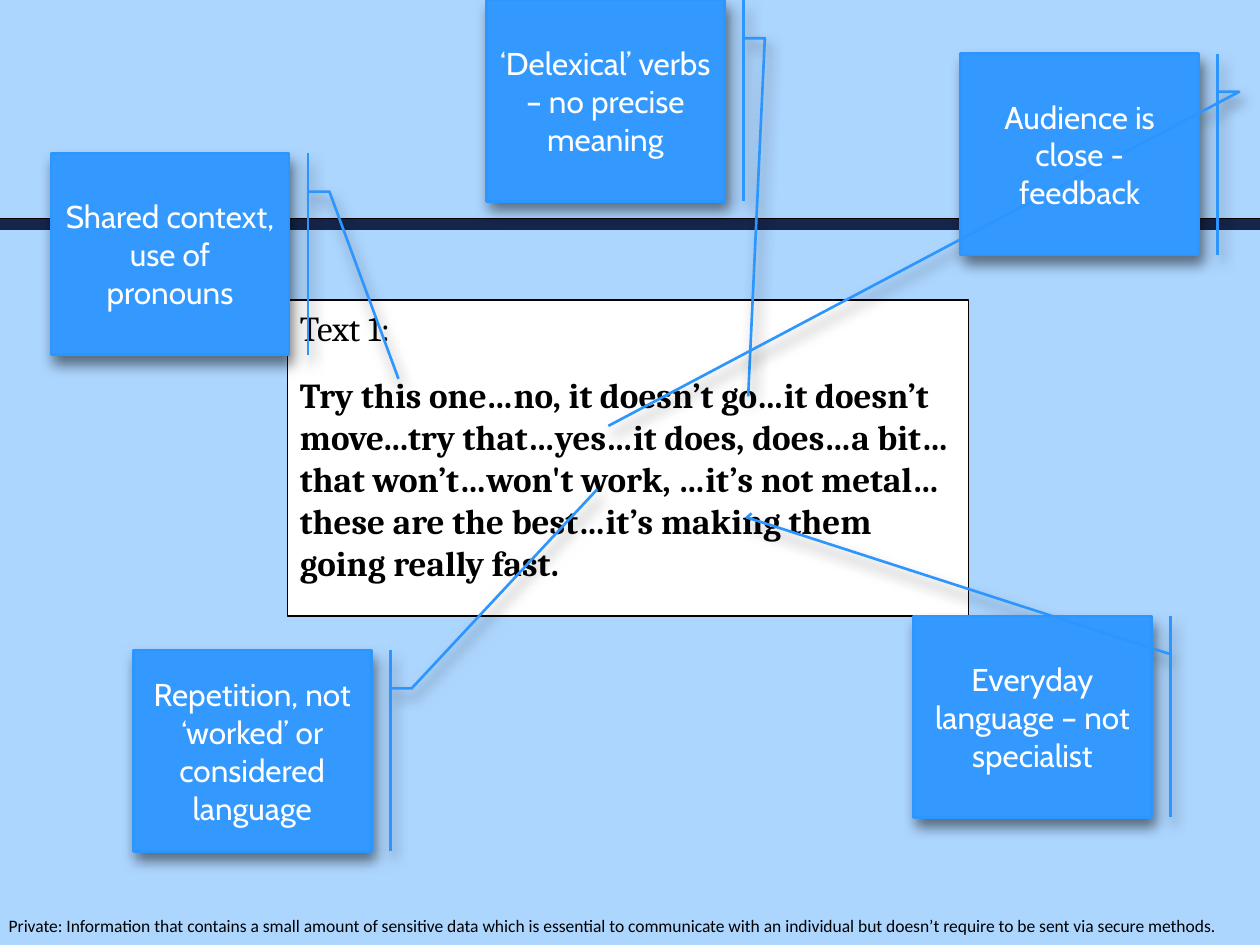
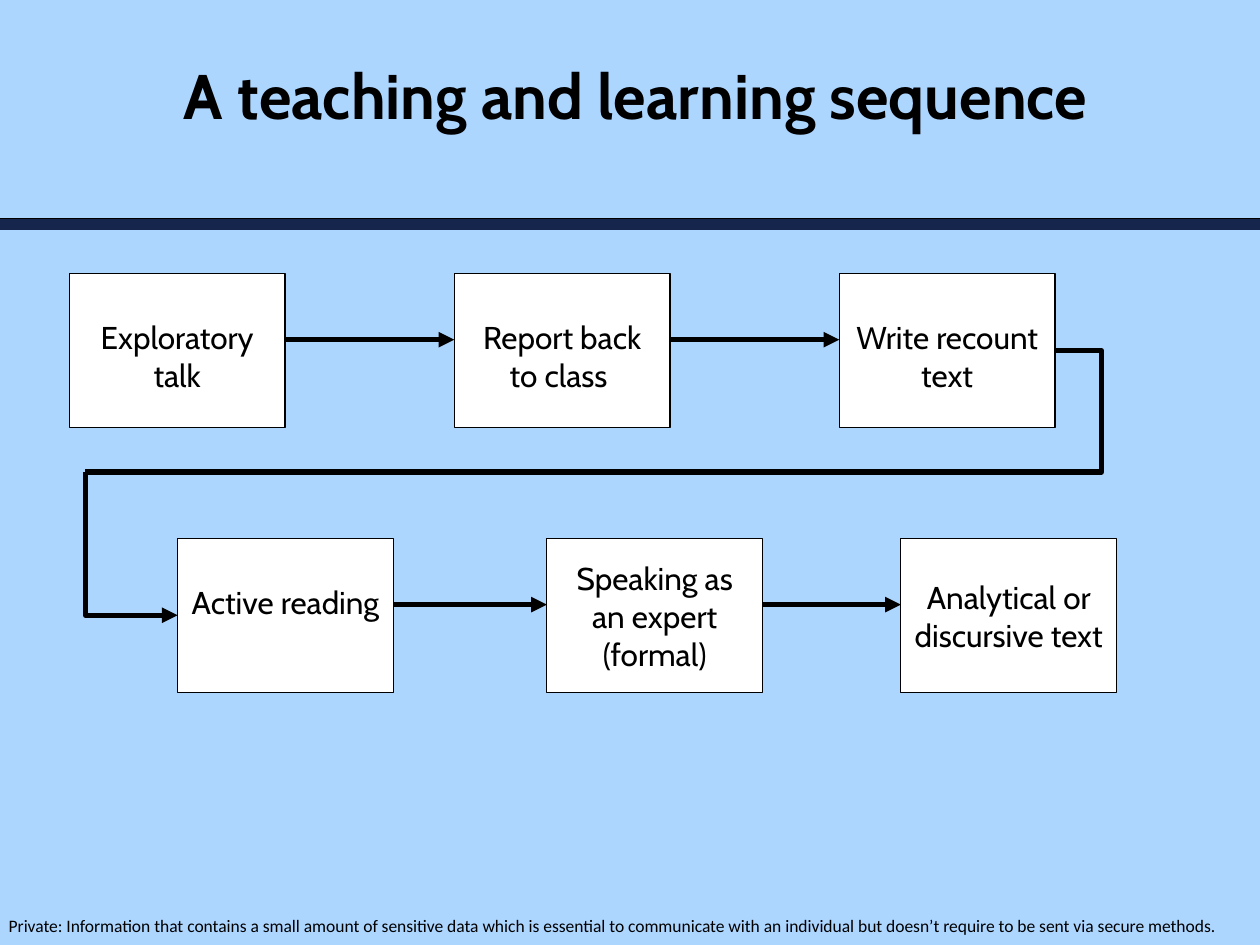
"""Build two slides on exploratory talk: an annotated transcript and a teaching sequence."""
import lxml.etree
import pptx
import pptx.dml.color
import pptx.enum.shapes
import pptx.enum.text
import pptx.oxml
import pptx.oxml.ns
import pptx.util

Pt = pptx.util.Pt
RGBColor = pptx.dml.color.RGBColor
SHAPE = pptx.enum.shapes.MSO_SHAPE
CONNECTOR = pptx.enum.shapes.MSO_CONNECTOR
ANCHOR = pptx.enum.text.MSO_ANCHOR
ALIGN = pptx.enum.text.PP_ALIGN
qn = pptx.oxml.ns.qn

SKY = RGBColor(0xAD, 0xD6, 0xFF)
NAVY = RGBColor(0x15, 0x25, 0x4B)
CALLOUT_FILL = RGBColor(0x33, 0x99, 0xFF)
CALLOUT_LINE = RGBColor(0x2D, 0x96, 0xFE)
BLACK = RGBColor(0, 0, 0)
WHITE = RGBColor(255, 255, 255)

WIDTH, HEIGHT = 720, 540
PRIVACY_NOTE = (
    "Private: Information that contains a small amount of sensitive data which is essential "
    "to communicate with an individual but doesn’t require to be sent via secure methods."
)
CALLOUT_SHADOW = (
    '<a:outerShdw xmlns:a="http://schemas.openxmlformats.org/drawingml/2006/main" '
    'blurRad="101600" dist="63500" dir="4200000" rotWithShape="0">'
    '<a:srgbClr val="000000"><a:alpha val="50000"/></a:srgbClr></a:outerShdw>'
)


def format_text(para, font, size, color, bold=False, align=ALIGN.LEFT):
    para.alignment = align
    for span in para.runs:
        span.font.name = font
        span.font.size = Pt(size)
        span.font.bold = bold
        span.font.color.rgb = color


def add_line(page, kind, start, end, color, weight, arrow=False):
    line = page.shapes.add_connector(kind, *(Pt(value) for value in start + end))
    line.line.color.rgb = color
    line.line.width = Pt(weight)
    if arrow:
        lxml.etree.SubElement(line.line._get_or_add_ln(), qn("a:tailEnd"), type="triangle")
    lxml.etree.SubElement(line._element.spPr, qn("a:effectLst"))
    return line


deck = pptx.Presentation()
deck.slide_width, deck.slide_height = Pt(WIDTH), Pt(HEIGHT)
background = deck.slide_master.background.fill
background.solid()
background.fore_color.rgb = SKY

talk_page = deck.slides.add_slide(deck.slide_layouts[6])
sequence_page = deck.slides.add_slide(deck.slide_layouts[5])

for page in (talk_page, sequence_page):
    note = page.shapes.add_textbox(Pt(5), Pt(522.7), Pt(695.5), Pt(12.2))
    frame = note.text_frame
    frame.word_wrap = True
    frame.margin_left = frame.margin_right = frame.margin_top = frame.margin_bottom = 0
    frame.text = PRIVACY_NOTE
    format_text(frame.paragraphs[0], "Calibri", 10, BLACK)
    for height, color, weight in ((128.2, NAVY, 7), (124.6, BLACK, 0.5)):
        add_line(page, CONNECTOR.STRAIGHT, (0, height), (WIDTH, height), color, weight)

transcript = talk_page.shapes.add_shape(SHAPE.RECTANGLE, Pt(164.3), Pt(171.4), Pt(389), Pt(180.6))
transcript.shadow.inherit = False
transcript.fill.solid()
transcript.fill.fore_color.rgb = WHITE
transcript.line.color.rgb = BLACK
transcript.line.width = Pt(0.75)
frame = transcript.text_frame
frame.word_wrap = True
frame.vertical_anchor = ANCHOR.TOP
frame.text = (
    "Text 1:\nTry this one…no, it doesn’t go…it doesn’t move...try that…yes…it does, does…a bit…"
    "that won’t…won't work, …it’s not metal…these are the best…it’s making them going really fast."
)
heading, speech = frame.paragraphs
format_text(heading, "Cambria", 20, BLACK)
format_text(speech, "Cambria", 20, BLACK, bold=True)
speech.space_before = Pt(14.5)

CALLOUTS = (
    ("Shared context, use of pronouns", 29.2, 87.7, (0.19, -0.08, 0.19, -0.17, 1.12, -0.46)),
    ("‘Delexical’ verbs – no precise meaning", 278, 0, (0.19, -0.08, 0.19, -0.17, 1.97, -0.1)),
    ("Audience is close - feedback", 549, 30.6, (0.19, -0.08, 0.19, -0.17, 1.85, 2.48)),
    ("Everyday language – not specialist", 522, 352, (0.19, -0.08, -0.49, 1.7, -0.51, 1.68)),
    ("Repetition, not ‘worked’ or considered language", 76.2, 371.5,
     (0.19, -0.08, 0.19, -0.17, -0.8, -0.95)),
)
for words, left, top, pointer in CALLOUTS:
    callout = talk_page.shapes.add_shape(
        SHAPE.LINE_CALLOUT_2_BORDER_AND_ACCENT_BAR, Pt(left), Pt(top), Pt(136), Pt(115))
    callout._element.spPr.find(qn("a:xfrm")).set("flipH", "1")
    for index, value in enumerate(pointer):
        callout.adjustments[index] = value
    callout.fill.solid()
    callout.fill.fore_color.rgb = CALLOUT_FILL
    callout.line.color.rgb = CALLOUT_LINE
    callout.line.width = Pt(1.5)
    callout.shadow.inherit = False
    effects = callout._element.spPr.find(qn("a:effectLst"))
    effects.append(pptx.oxml.parse_xml(CALLOUT_SHADOW))
    callout.text_frame.word_wrap = True
    callout.text_frame.vertical_anchor = ANCHOR.MIDDLE
    callout.text_frame.text = words
    format_text(callout.text_frame.paragraphs[0], "Cabin", 18, WHITE, align=ALIGN.CENTER)

title = sequence_page.shapes.title
title.left, title.top, title.width, title.height = Pt(39.6), Pt(26), Pt(647.3), Pt(56)
title.text_frame.text = "A teaching and learning sequence"
title.text_frame.vertical_anchor = ANCHOR.MIDDLE
format_text(title.text_frame.paragraphs[0], "Cabin", 36, BLACK, bold=True, align=ALIGN.CENTER)

STEP_WIDTH, STEP_HEIGHT, ARROW_DROP = 123.3, 88.2, 37.8
STEP_ROWS = (
    (156.3, ((39.6, "Exploratory talk", ANCHOR.TOP),
             (259.6, "Report back to class ", ANCHOR.TOP),
             (479.6, "Write recount text", ANCHOR.TOP))),
    (307.7, ((101.5, "Active reading", ANCHOR.TOP),
             (312.5, "Speaking as an expert (formal)", ANCHOR.MIDDLE),
             (514.8, "Analytical or discursive text", ANCHOR.MIDDLE))),
)
for top, steps in STEP_ROWS:
    for left, words, anchor in steps:
        step = sequence_page.shapes.add_shape(
            SHAPE.RECTANGLE, Pt(left), Pt(top), Pt(STEP_WIDTH), Pt(STEP_HEIGHT))
        step.shadow.inherit = False
        step.fill.solid()
        step.fill.fore_color.rgb = WHITE
        step.line.color.rgb = BLACK
        step.line.width = Pt(0.75)
        frame = step.text_frame
        frame.word_wrap = True
        frame.vertical_anchor = anchor
        if anchor == ANCHOR.TOP:
            frame.margin_top = Pt(25.4)
        frame.text = words
        format_text(frame.paragraphs[0], "Cabin", 18, BLACK, align=ALIGN.CENTER)
    for current, following in zip(steps, steps[1:]):
        add_line(sequence_page, CONNECTOR.STRAIGHT, (current[0] + STEP_WIDTH, top + ARROW_DROP),
                 (following[0], top + ARROW_DROP), BLACK, 3, arrow=True)

return_line = add_line(sequence_page, CONNECTOR.ELBOW, (602.9, 200.4), (48.8, 269.7), BLACK, 3)
bend = return_line._element.spPr.find(qn("a:prstGeom")).get_or_add_avLst()
lxml.etree.SubElement(bend, qn("a:gd"), name="adj1", fmla="val -4800")

entry_arrow = add_line(sequence_page, CONNECTOR.ELBOW, (116.2, 284.2), (34.1, 336.9), BLACK, 3,
                       arrow=True)
entry_arrow._element.spPr.find(qn("a:prstGeom")).set("prst", "bentConnector2")
entry_arrow._element.spPr.find(qn("a:xfrm")).set("rot", "16200000")

deck.save("out.pptx")
